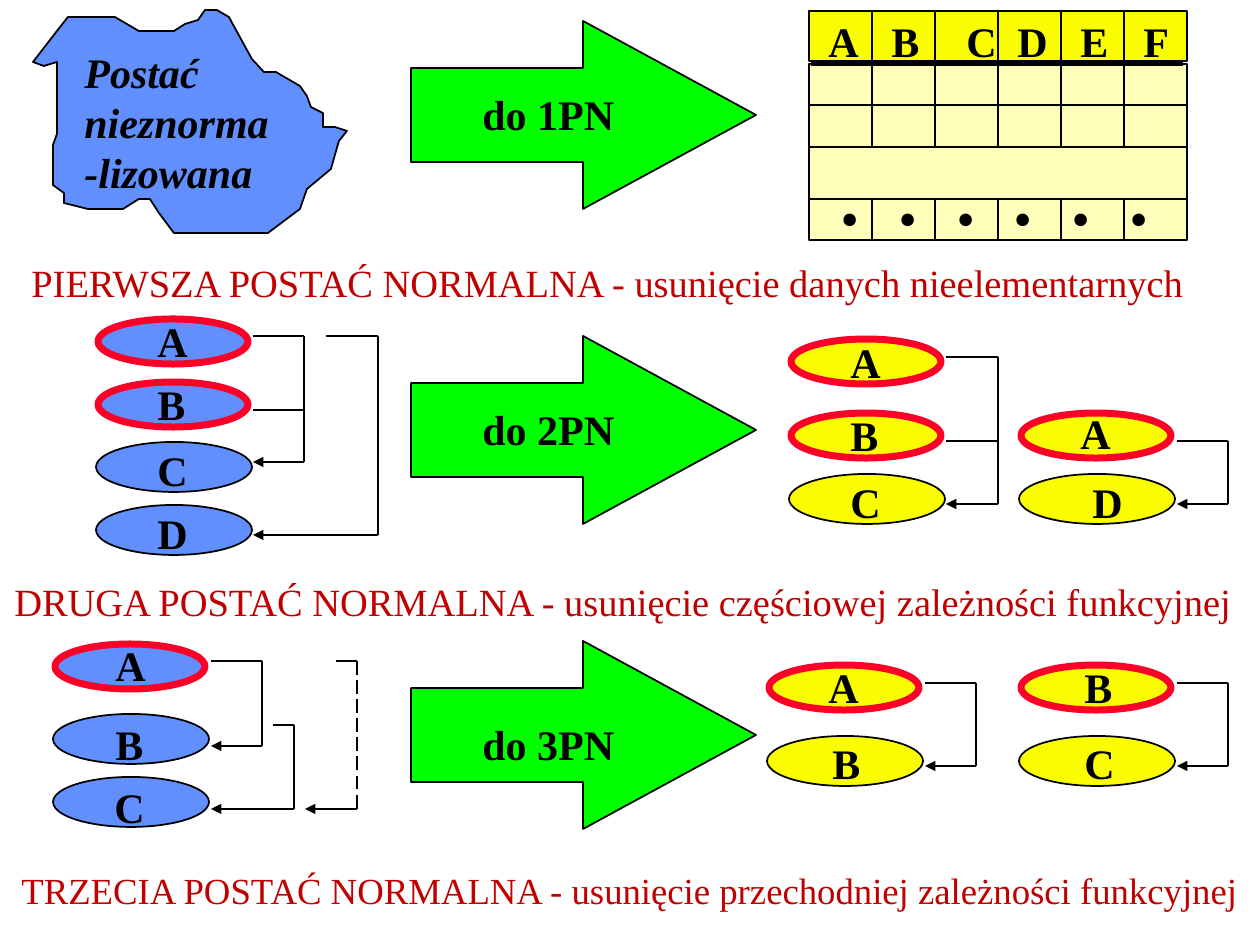
from dataclasses import dataclass
from lxml.etree import SubElement
from pptx import Presentation
from pptx.dml.color import RGBColor
from pptx.enum.dml import MSO_LINE
from pptx.enum.shapes import MSO_CONNECTOR, MSO_SHAPE
from pptx.enum.text import MSO_AUTO_SIZE as AUTO_SIZE
from pptx.oxml.ns import qn
from pptx.util import Emu, Pt

PX_PER_INCH = 126
MIDDLE_TOP, MIDDLE_BOTTOM = 0, 2


def px(length):
    return Emu(round(length * 914400 / PX_PER_INCH))


@dataclass(frozen=True)
class Theme:
    font: str = "Times New Roman"
    ink: str = "000000"
    caption: str = "C00000"
    blue: str = "618FFD"
    yellow: str = "FAFD00"
    pale: str = "FCFEB9"
    green: str = "00FF00"
    key: str = "FC0128"
    label_size: int = 24
    dots_size: int = 44
    thin: int = 1
    thick: int = 4


class Board:
    LETTER_WIDTHS = {"B": 53, "E": 53, "F": 50}

    def __init__(self, page, theme):
        self.page = page
        self.theme = theme

    def paint(self, shape, fill, line=None, weight=None):
        shape.shadow.inherit = False
        shape.fill.solid()
        shape.fill.fore_color.rgb = RGBColor.from_string(fill)
        shape.line.color.rgb = RGBColor.from_string(line or self.theme.ink)
        shape.line.width = Pt(weight or self.theme.thin)
        return shape

    def shape(self, kind, x, y, width, height, fill, line=None, weight=None):
        shape = self.page.shapes.add_shape(kind, px(x), px(y), px(width), px(height))
        return self.paint(shape, fill, line, weight)

    def outline(self, points, fill):
        start, *rest = [(px(x), px(y)) for x, y in points]
        builder = self.page.shapes.build_freeform(*start, scale=1.0)
        builder.add_line_segments(rest, close=True)
        return self.paint(builder.convert_to_shape(), fill)

    def text(self, words, x, y, width, height, size=None, color=None,
             bold=True, italic=False, wrap=False):
        box = self.page.shapes.add_textbox(px(x), px(y), px(width), px(height))
        frame = box.text_frame
        frame.word_wrap = wrap
        frame.auto_size = AUTO_SIZE.SHAPE_TO_FIT_TEXT
        para = frame.paragraphs[0]
        para.text = words
        font = para.font
        font.name = self.theme.font
        font.size = Pt(size or self.theme.label_size)
        font.bold, font.italic = bold, italic
        font.color.rgb = RGBColor.from_string(color or self.theme.ink)
        return frame

    def letter(self, letter, x, y):
        self.text(letter, x, y, self.LETTER_WIDTHS.get(letter, 55), 63)

    def line(self, x1, y1, x2, y2, weight=None, arrow=False, dashed=False):
        line = self.page.shapes.add_connector(
            MSO_CONNECTOR.STRAIGHT, px(x1), px(y1), px(x2), px(y2))
        line.line.color.rgb = RGBColor.from_string(self.theme.ink)
        line.line.width = Pt(weight or self.theme.thin)
        if dashed:
            line.line.dash_style = MSO_LINE.LONG_DASH
        properties = line._element.spPr
        if arrow:
            SubElement(properties.find(qn("a:ln")), qn("a:headEnd"), type="triangle")
        SubElement(properties, qn("a:effectLst"))
        return line

    def attribute(self, letter, x, y, letter_x, letter_y, fill, is_key):
        if is_key:
            self.shape(MSO_SHAPE.OVAL, x + 2, y, 150, 45, fill,
                       self.theme.key, self.theme.thick)
        else:
            self.shape(MSO_SHAPE.OVAL, x, y, 156, 50, fill)
        self.letter(letter, letter_x, letter_y)

    def dependency(self, left, right, top, bottom, top_left=None, middle=None,
                   dashed=False):
        self.line(top_left or left, top, right, top)
        if middle:
            self.line(left, middle, right, middle)
        self.line(right, top, right, bottom, dashed=dashed)
        self.line(left, bottom, right, bottom, arrow=True)

    def step(self, words, arrow_y, words_y):
        arrow = self.shape(MSO_SHAPE.RIGHT_ARROW, 411, arrow_y, 345, 188,
                           self.theme.green)
        arrow.adjustments[0], arrow.adjustments[1] = 0.5, 0.92
        self.text(words, 470, words_y, 159, 63)

    def caption(self, words, x, y, width, size):
        self.text(words, x, y, width, 59, size, self.theme.caption, bold=False)


CLOUD = [
    (44, 66), (57, 62), (57, 134), (53, 145), (53, 185), (64, 193), (64, 203),
    (88, 209), (123, 209), (139, 199), (150, 199), (159, 213), (174, 233),
    (268, 233), (300, 209), (307, 189), (331, 169), (339, 141), (347, 131),
    (335, 127), (323, 127), (323, 113), (311, 107), (307, 96), (300, 86),
    (276, 72), (264, 72), (252, 59), (229, 17), (217, 10), (205, 10), (198, 20),
    (185, 24), (174, 31), (139, 31), (115, 17), (68, 17), (57, 31), (33, 62),
]

# Column x, fill, then letter, ellipse y, letter x, letter y, key or not
ATTRIBUTES = [
    (96, Theme.blue, [("A", 319, 145, 309, True), ("B", 382, 145, 372, True),
                      ("C", 442, 145, 438, False), ("D", 505, 145, 501, False)]),
    (789, Theme.yellow, [("A", 339, 838, 330, True), ("B", 413, 838, 403, True),
                         ("C", 474, 838, 470, False)]),
    (1019, Theme.yellow, [("A", 413, 1068, 401, True), ("D", 474, 1080, 470, False)]),
    (53, Theme.blue, [("A", 644, 103, 633, True), ("B", 714, 103, 712, False),
                      ("C", 777, 102, 775, False)]),
    (767, Theme.yellow, [("A", 665, 816, 655, True), ("B", 736, 820, 731, False)]),
    (1019, Theme.yellow, [("B", 665, 1072, 655, True), ("C", 736, 1072, 731, False)]),
]


def draw_relation(board):
    left, right, top, bottom = 809, 1187, 11, 240
    theme = board.theme
    header = board.shape(MSO_SHAPE.RECTANGLE, left, top, right - left, 50, theme.yellow)
    body = board.shape(MSO_SHAPE.RECTANGLE, left, 64, right - left, bottom - 64, theme.pale)
    board.line(811, 63, 1183, 63, theme.thick)
    for y in (105, 147, 199):
        board.line(left, y, right, y)
    for x in range(872, right - 1, 63):
        upper = board.line(x, top, x, 147)
        lower = board.line(x, 200, x, bottom)
        if 2 * x == left + right:
            upper.begin_connect(header, MIDDLE_TOP)
            lower.end_connect(body, MIDDLE_BOTTOM)
    for letter, x in zip("ABCDEF", (816, 879, 954, 1005, 1068, 1131)):
        board.letter(letter, x, 9)
    # Spaced row of dots
    dots = board.text(". . . . . .", left, 142, 391, 105, theme.dots_size, wrap=True)
    dots.margin_left = px(32)
    for span in dots.paragraphs[0].runs:
        span._r.get_or_add_rPr().set("spc", "550")


def main():
    deck = Presentation()
    deck.slide_width, deck.slide_height = px(1260), px(945)
    board = Board(deck.slides.add_slide(deck.slide_layouts[6]), Theme())

    # First normal form
    board.outline(CLOUD, Theme.blue)
    board.text("Postać nieznorma-lizowana", 72, 40, 222, 164, italic=True, wrap=True)
    draw_relation(board)

    # Steps between forms
    board.step("do 1PN", 21, 82)
    board.step("do 2PN", 336, 397)
    board.step("do 3PN", 641, 712)

    # Attributes
    for x, fill, column in ATTRIBUTES:
        for letter, y, letter_x, letter_y, is_key in column:
            board.attribute(letter, x, y, letter_x, letter_y, fill, is_key)

    # Dependencies of the second form
    board.dependency(253, 304, 336, 462, middle=410)
    board.dependency(253, 378, 336, 535, top_left=326)
    board.dependency(946, 998, 357, 504, middle=441)
    board.dependency(1177, 1228, 441, 504)

    # Dependencies of the third form
    board.dependency(211, 262, 661, 746)
    board.dependency(211, 294, 725, 809, top_left=273)
    board.dependency(305, 357, 661, 809, top_left=336, dashed=True)
    board.dependency(925, 976, 683, 766)
    board.dependency(1177, 1228, 683, 766)

    # Captions
    board.caption("PIERWSZA POSTAĆ NORMALNA - usunięcie danych nieelementarnych",
                  19, 253, 1191, 22)
    board.caption("DRUGA POSTAĆ NORMALNA - usunięcie częściowej zależności funkcyjnej",
                  2, 572, 1255, 22)
    board.caption("TRZECIA POSTAĆ NORMALNA - usunięcie przechodniej zależności funkcyjnej",
                  9, 862, 1255, 21)

    deck.save("out.pptx")


if __name__ == "__main__":
    main()
